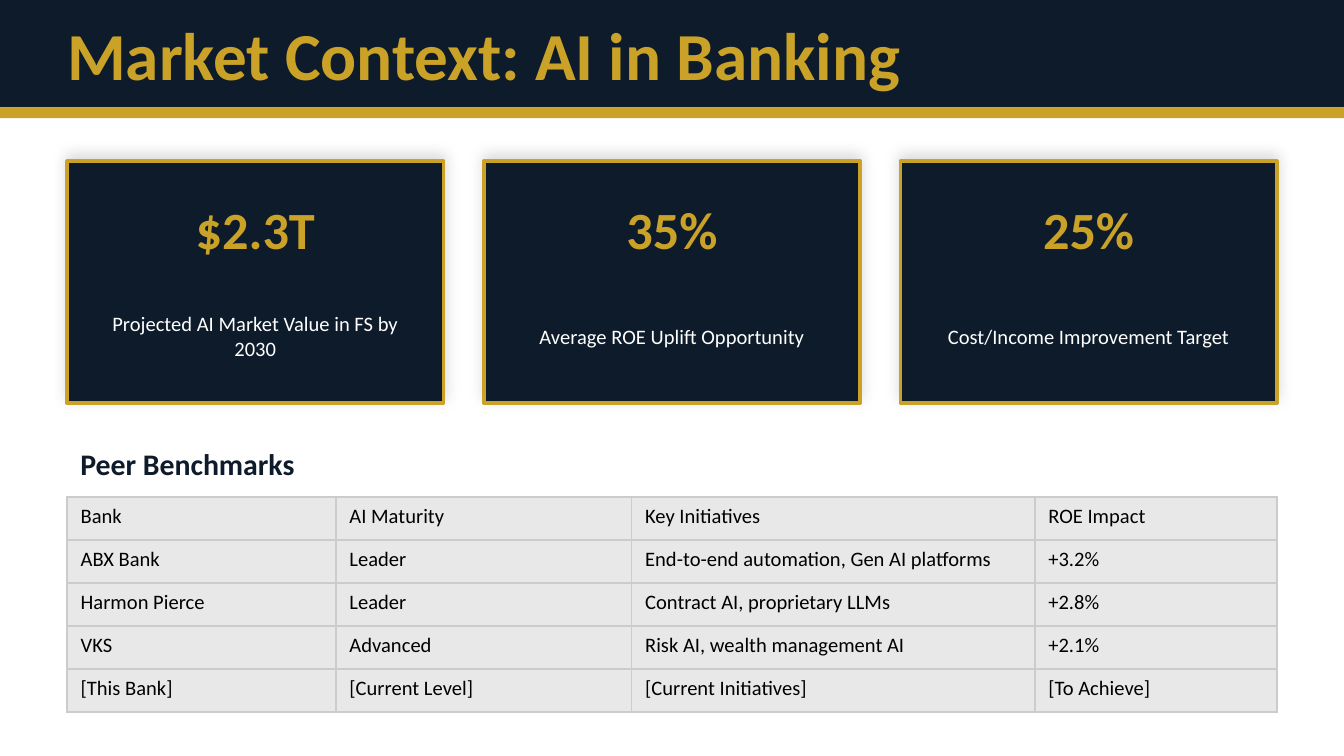
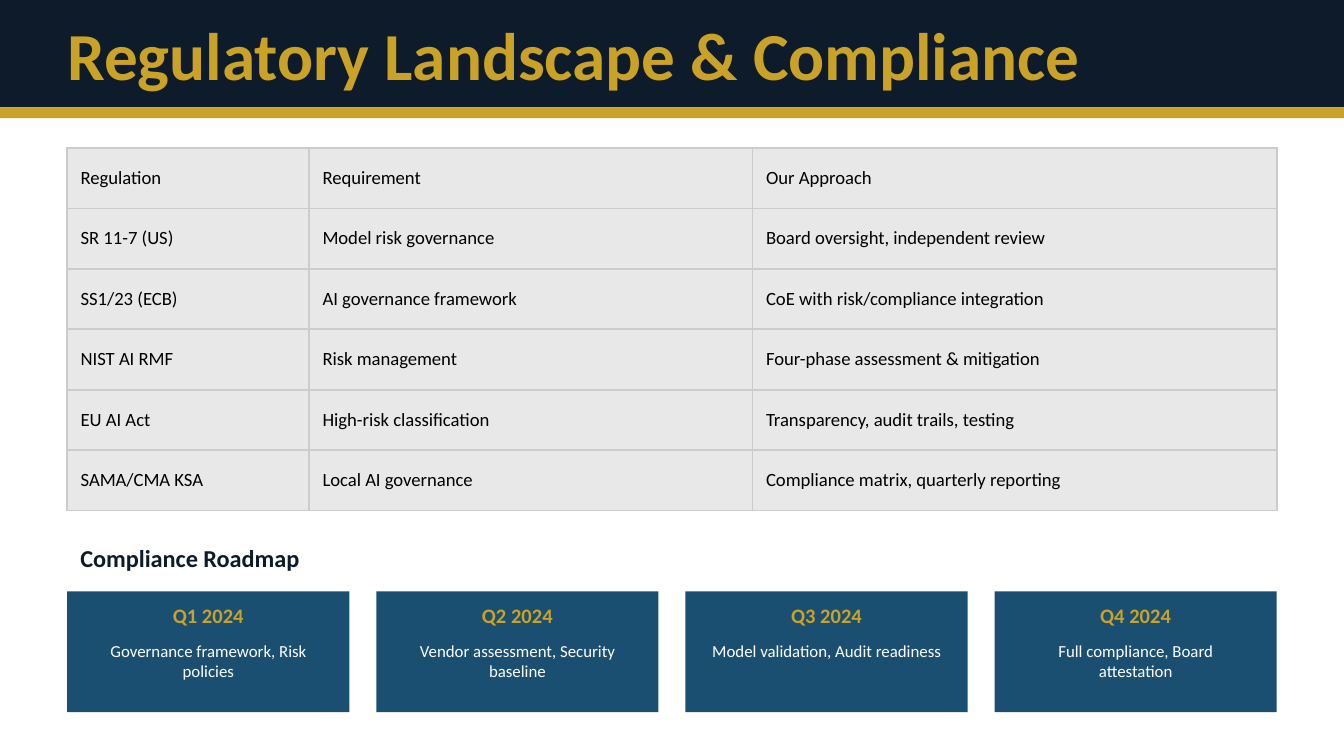
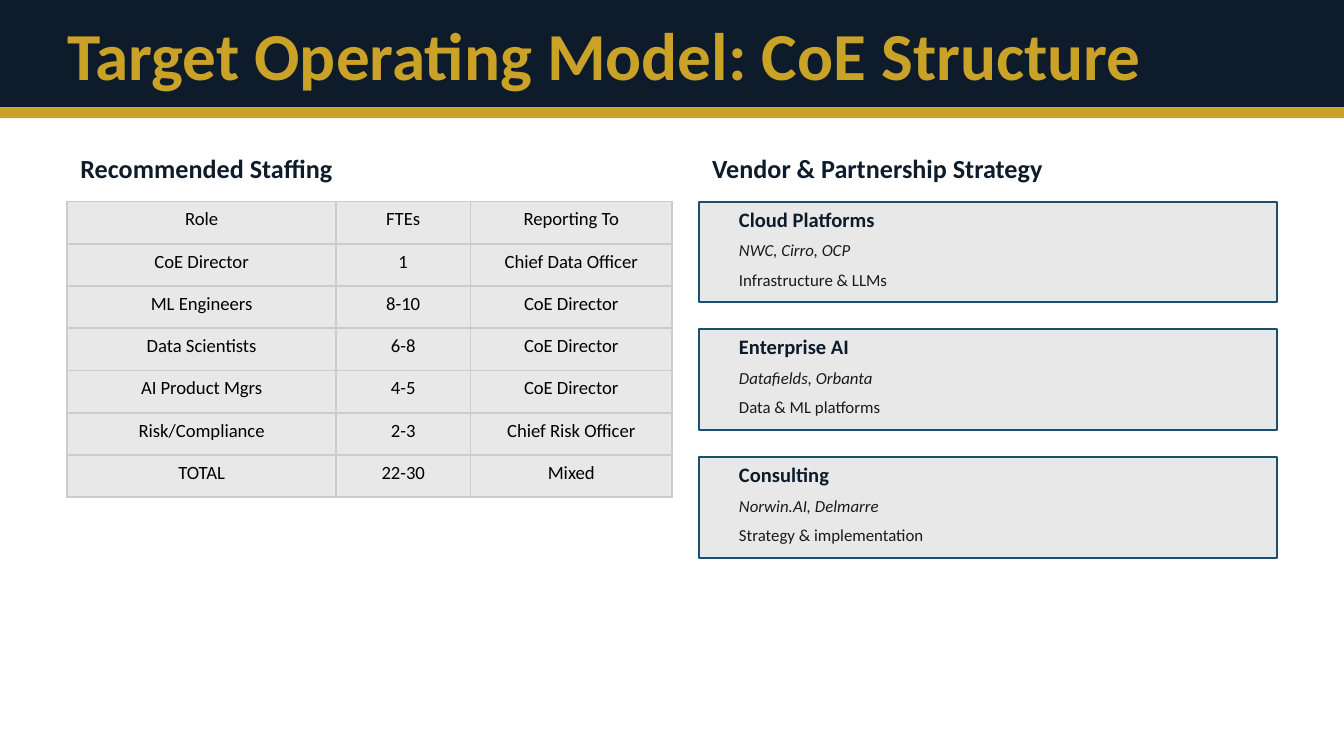
"""Build three slides on AI in banking: market context, regulation and operating model."""
from dataclasses import dataclass
from typing import NamedTuple, Optional

from lxml import etree
from pptx import Presentation
from pptx.dml.color import RGBColor
from pptx.enum.shapes import MSO_SHAPE
from pptx.enum.text import MSO_ANCHOR, MSO_AUTO_SIZE, PP_ALIGN
from pptx.oxml.ns import qn
from pptx.util import Pt

NAVY = RGBColor(0x0D, 0x1B, 0x2A)
GOLD = RGBColor(0xC9, 0xA2, 0x27)
BLUE = RGBColor(0x1B, 0x4F, 0x72)
WHITE = RGBColor(0xFF, 0xFF, 0xFF)
BLACK = RGBColor(0x00, 0x00, 0x00)
INK = RGBColor(0x1A, 0x1A, 0x1A)
PALE = RGBColor(0xE8, 0xE8, 0xE8)
GRID = RGBColor(0xCC, 0xCC, 0xCC)

RECTANGLE = MSO_SHAPE.RECTANGLE
TOP, MIDDLE = MSO_ANCHOR.TOP, MSO_ANCHOR.MIDDLE
LEFT, CENTER = PP_ALIGN.LEFT, PP_ALIGN.CENTER
NO_AUTOFIT = MSO_AUTO_SIZE.NONE

FONT = "Calibri"
SLIDE_WIDTH, SLIDE_HEIGHT = 720, 405
MARGIN = 36
CONTENT_WIDTH = SLIDE_WIDTH - 2 * MARGIN
HEADING_HEIGHT = 21.6
TITLE_ONLY = 5


@dataclass(frozen=True)
class Box:
    """A rectangle measured in points."""

    left: float
    top: float
    width: float
    height: float

    def lengths(self) -> tuple:
        """Return the four measures as lengths."""
        return Pt(self.left), Pt(self.top), Pt(self.width), Pt(self.height)

    def shifted(self, right: float = 0, down: float = 0) -> "Box":
        """Return the same box moved."""
        return Box(self.left + right, self.top + down, self.width, self.height)

    def line(self, inset: float, down: float, height: float) -> "Box":
        """Return a strip inside the box, inset at both sides."""
        return Box(self.left + inset, self.top + down, self.width - 2 * inset, height)


class Metric(NamedTuple):
    """A headline figure and its meaning."""

    value: str
    meaning: str


class Milestone(NamedTuple):
    """A quarter of the roadmap and its work."""

    quarter: str
    work: str


class Partner(NamedTuple):
    """A partner category with example firms and their role."""

    category: str
    firms: str
    role: str


@dataclass(frozen=True)
class Grid:
    """A table with its place, column widths and text format."""

    box: Box
    columns: tuple
    rows: tuple
    size: float
    anchor: MSO_ANCHOR = TOP
    align: PP_ALIGN = LEFT


METRICS = (
    Metric("$2.3T", "Projected AI Market Value in FS by 2030"),
    Metric("35%", "Average ROE Uplift Opportunity"),
    Metric("25%", "Cost/Income Improvement Target"),
)

BENCHMARKS = Grid(
    Box(MARGIN, 266.4, CONTENT_WIDTH, 115.2),
    (144, 158.4, 216, 129.6),
    (
        ("Bank", "AI Maturity", "Key Initiatives", "ROE Impact"),
        ("ABX Bank", "Leader", "End-to-end automation, Gen AI platforms", "+3.2%"),
        ("Harmon Pierce", "Leader", "Contract AI, proprietary LLMs", "+2.8%"),
        ("VKS", "Advanced", "Risk AI, wealth management AI", "+2.1%"),
        ("[This Bank]", "[Current Level]", "[Current Initiatives]", "[To Achieve]"),
    ),
    size=11,
)

REGULATIONS = Grid(
    Box(MARGIN, 79.2, CONTENT_WIDTH, 194.4),
    (129.6, 237.6, 280.8),
    (
        ("Regulation", "Requirement", "Our Approach"),
        ("SR 11-7 (US)", "Model risk governance", "Board oversight, independent review"),
        ("SS1/23 (ECB)", "AI governance framework", "CoE with risk/compliance integration"),
        ("NIST AI RMF", "Risk management", "Four-phase assessment & mitigation"),
        ("EU AI Act", "High-risk classification", "Transparency, audit trails, testing"),
        ("SAMA/CMA KSA", "Local AI governance", "Compliance matrix, quarterly reporting"),
    ),
    size=10,
    anchor=MIDDLE,
)

MILESTONES = (
    Milestone("Q1 2024", "Governance framework, Risk policies"),
    Milestone("Q2 2024", "Vendor assessment, Security baseline"),
    Milestone("Q3 2024", "Model validation, Audit readiness"),
    Milestone("Q4 2024", "Full compliance, Board attestation"),
)

STAFFING = Grid(
    Box(MARGIN, 108, 324, 158.4),
    (144, 72, 108),
    (
        ("Role", "FTEs", "Reporting To"),
        ("CoE Director", "1", "Chief Data Officer"),
        ("ML Engineers", "8-10", "CoE Director"),
        ("Data Scientists", "6-8", "CoE Director"),
        ("AI Product Mgrs", "4-5", "CoE Director"),
        ("Risk/Compliance", "2-3", "Chief Risk Officer"),
        ("TOTAL", "22-30", "Mixed"),
    ),
    size=10,
    align=CENTER,
)

PARTNERS = (
    Partner("Cloud Platforms", "NWC, Cirro, OCP", "Infrastructure & LLMs"),
    Partner("Enterprise AI", "Datafields, Orbanta", "Data & ML platforms"),
    Partner("Consulting", "Norwin.AI, Delmarre", "Strategy & implementation"),
)


def write(frame, text: str, *, size: float, color: RGBColor, bold: bool = False,
          italic: bool = False, align: PP_ALIGN = LEFT) -> None:
    """Put one formatted paragraph into a text frame."""
    paragraph = frame.paragraphs[0]
    paragraph.alignment = align
    run = paragraph.add_run()
    run.text = text
    font = run.font
    font.name, font.size, font.bold, font.italic = FONT, Pt(size), bold, italic
    font.color.rgb = color


def add_text(slide, box: Box, text: str, anchor: MSO_ANCHOR = MIDDLE, **text_format) -> None:
    """Add a wrapping text box."""
    frame = slide.shapes.add_textbox(*box.lengths()).text_frame
    frame.word_wrap = True
    frame.vertical_anchor = anchor
    write(frame, text, **text_format)


def add_heading(slide, box: Box, text: str, size: float) -> None:
    """Add a section heading."""
    add_text(slide, box, text, size=size, color=NAVY, bold=True)


def add_panel(slide, box: Box, fill: RGBColor, border: Optional[RGBColor] = None,
              border_width: float = 1):
    """Add a flat rectangle with an optional border."""
    panel = slide.shapes.add_shape(RECTANGLE, *box.lengths())
    panel.shadow.inherit = False
    panel.fill.solid()
    panel.fill.fore_color.rgb = fill
    if border is None:
        panel.line.fill.background()
    else:
        panel.line.color.rgb = border
        panel.line.width = Pt(border_width)
    return panel


def add_glow(panel) -> None:
    """Give a panel a soft shadow that falls upwards."""
    effects = panel.element.spPr.find(qn("a:effectLst"))
    shadow = etree.SubElement(effects, qn("a:outerShdw"), blurRad=str(Pt(8)), dist=str(Pt(3)),
                              dir=str(270 * 60000), algn="bl", rotWithShape="0")
    tint = etree.SubElement(shadow, qn("a:srgbClr"), val=str(BLACK))
    etree.SubElement(tint, qn("a:alpha"), val="15000")


def add_borders(cell) -> None:
    """Draw a thin grey line on each side of a cell."""
    properties = cell._tc.get_or_add_tcPr()
    for side in ("a:lnL", "a:lnR", "a:lnT", "a:lnB"):
        border = etree.SubElement(properties, qn(side), w=str(Pt(1)))
        fill = etree.SubElement(border, qn("a:solidFill"))
        etree.SubElement(fill, qn("a:srgbClr"), val=str(GRID))


def add_grid(slide, grid: Grid) -> None:
    """Add a table with uniform cells and equal rows."""
    table = slide.shapes.add_table(len(grid.rows), len(grid.columns), *grid.box.lengths()).table
    table.first_row = table.horz_banding = False
    for column, width in zip(table.columns, grid.columns):
        column.width = Pt(width)
    for row, texts in zip(table.rows, grid.rows):
        row.height = Pt(grid.box.height / len(grid.rows))
        for cell, text in zip(row.cells, texts):
            add_borders(cell)
            cell.fill.solid()
            cell.fill.fore_color.rgb = PALE
            cell.vertical_anchor = grid.anchor
            write(cell.text_frame, text, size=grid.size, color=BLACK, align=grid.align)


def add_titled_slide(deck, text: str):
    """Add a slide with the navy title band and its gold rule."""
    slide = deck.slides.add_slide(deck.slide_layouts[TITLE_ONLY])
    add_panel(slide, Box(0, 0, SLIDE_WIDTH, 57.6), NAVY)
    rule = add_panel(slide, Box(0, 57.6, SLIDE_WIDTH, 5.76), GOLD)
    title = slide.shapes.title
    rule.element.addnext(title.element)
    title.left, title.top, title.width, title.height = Box(MARGIN, 10.8, CONTENT_WIDTH, 36).lengths()
    frame = title.text_frame
    frame.margin_left = frame.margin_top = frame.margin_right = frame.margin_bottom = 0
    frame.auto_size = NO_AUTOFIT
    frame.word_wrap = True
    frame.vertical_anchor = MIDDLE
    write(frame, text, size=36, color=GOLD, bold=True)
    return slide


def add_metric(slide, card: Box, metric: Metric) -> None:
    """Add a card with a headline figure."""
    add_glow(add_panel(slide, card, NAVY, GOLD, 2))
    add_text(slide, card.line(0, 14.4, 43.2), metric.value,
             size=28, color=GOLD, bold=True, align=CENTER)
    add_text(slide, card.line(7.2, 64.8, 57.6), metric.meaning,
             size=11, color=WHITE, align=CENTER)


def add_milestone(slide, card: Box, milestone: Milestone) -> None:
    """Add a roadmap quarter."""
    add_panel(slide, card, BLUE)
    add_text(slide, card.line(7.2, 3.6, 18), milestone.quarter,
             size=11, color=GOLD, bold=True, align=CENTER)
    add_text(slide, card.line(7.2, 23.04, 36), milestone.work, TOP,
             size=9, color=WHITE, align=CENTER)


def add_partner(slide, card: Box, partner: Partner) -> None:
    """Add a partner category card."""
    add_panel(slide, card, PALE, BLUE)
    add_text(slide, card.line(14.4, 1.44, 15.84), partner.category,
             size=11, color=NAVY, bold=True)
    add_text(slide, card.line(14.4, 19.44, 12.96), partner.firms,
             size=9, color=INK, italic=True)
    add_text(slide, card.line(14.4, 33.84, 15.84), partner.role, size=9, color=INK)


def build_market(deck) -> None:
    """Build the market context slide."""
    slide = add_titled_slide(deck, "Market Context: AI in Banking")
    first_card = Box(MARGIN, 86.4, 201.6, 129.6)
    for index, metric in enumerate(METRICS):
        add_metric(slide, first_card.shifted(right=index * 223.2), metric)
    add_heading(slide, Box(MARGIN, 237.6, CONTENT_WIDTH, HEADING_HEIGHT), "Peer Benchmarks", 16)
    add_grid(slide, BENCHMARKS)


def build_regulation(deck) -> None:
    """Build the regulation slide."""
    slide = add_titled_slide(deck, "Regulatory Landscape & Compliance")
    add_grid(slide, REGULATIONS)
    add_heading(slide, Box(MARGIN, 288, CONTENT_WIDTH, HEADING_HEIGHT), "Compliance Roadmap", 13)
    first_card = Box(MARGIN, 316.8, 151.2, 64.8)
    for index, milestone in enumerate(MILESTONES):
        add_milestone(slide, first_card.shifted(right=index * 165.6), milestone)


def build_operating_model(deck) -> None:
    """Build the operating model slide."""
    slide = add_titled_slide(deck, "Target Operating Model: CoE Structure")
    add_heading(slide, Box(MARGIN, 79.2, 324, HEADING_HEIGHT), "Recommended Staffing", 14)
    add_grid(slide, STAFFING)
    first_card = Box(374.4, 108, 309.6, 54)
    add_heading(slide, first_card.line(0, -28.8, HEADING_HEIGHT),
                "Vendor & Partnership Strategy", 14)
    for index, partner in enumerate(PARTNERS):
        add_partner(slide, first_card.shifted(down=index * 68.4), partner)


def main() -> None:
    """Build and save the deck."""
    deck = Presentation()
    deck.slide_width, deck.slide_height = Pt(SLIDE_WIDTH), Pt(SLIDE_HEIGHT)
    build_market(deck)
    build_regulation(deck)
    build_operating_model(deck)
    deck.save("out.pptx")


if __name__ == "__main__":
    main()
